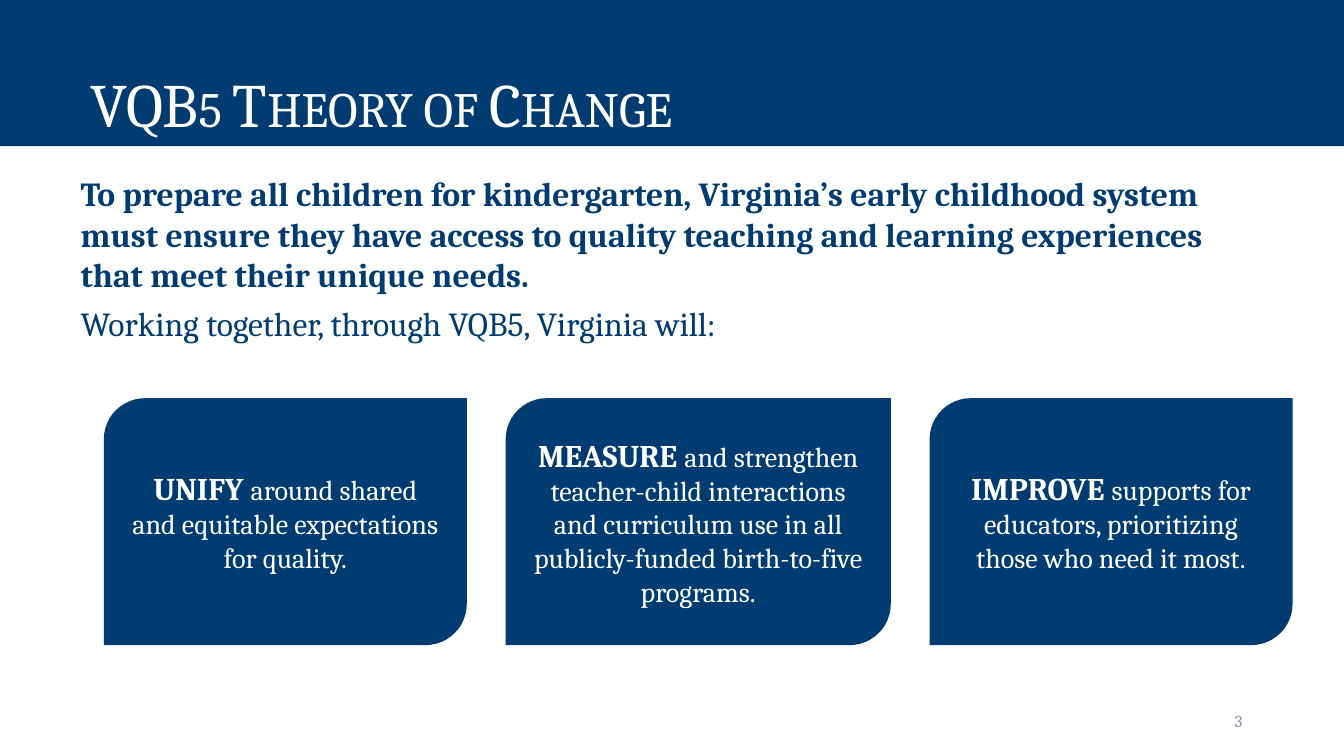
"""Build the VQB5 theory of change slide."""
from dataclasses import dataclass

from pptx import Presentation
from pptx.dml.color import RGBColor
from pptx.enum.shapes import MSO_SHAPE
from pptx.enum.text import MSO_ANCHOR, MSO_AUTO_SIZE, PP_ALIGN
from pptx.oxml.xmlchemy import OxmlElement
from pptx.util import Inches, Pt

CARD_SHAPE = MSO_SHAPE.ROUND_2_DIAG_RECTANGLE
LEFT, CENTER, RIGHT = PP_ALIGN.LEFT, PP_ALIGN.CENTER, PP_ALIGN.RIGHT
TOP, MIDDLE, BOTTOM = MSO_ANCHOR.TOP, MSO_ANCHOR.MIDDLE, MSO_ANCHOR.BOTTOM
NO_AUTOFIT = MSO_AUTO_SIZE.NONE
FONT = "Cambria"
NAVY, WHITE, GRAY = "003C71", "FFFFFF", "888FA3"
CARD_LEFT, CARD_TOP, CARD_HEIGHT, CARD_GAP = 1.03, 3.95, 2.45, 0.385
TITLE = "VQB5 Theory of Change"
GOAL = (
    "To prepare all children for kindergarten, Virginia’s early childhood system "
    "must ensure they have access to quality teaching and learning experiences "
    "that meet their unique needs."
)
LEAD_IN = "Working together, through VQB5, Virginia will:"


@dataclass(frozen=True)
class Card:
    """One strategy: its key word, explanation and width."""

    key_word: str
    explanation: str
    width: float


CARDS = (
    Card("UNIFY ", "around shared and equitable expectations for quality.", 3.6),
    Card(
        "MEASURE ",
        "and strengthen teacher-child interactions and curriculum use in all "
        "publicly-funded birth-to-five programs.",
        3.82,
    ),
    Card("IMPROVE ", "supports for educators, prioritizing those who need it most.", 3.6),
)


def color(value: str) -> RGBColor:
    """Turn a hex string into a colour."""
    return RGBColor.from_string(value)


def place(shape, left: float, top: float, width: float, height: float) -> None:
    """Set a shape's position and size in inches."""
    shape.left, shape.top = Inches(left), Inches(top)
    shape.width, shape.height = Inches(width), Inches(height)


def fill(shape, value: str) -> None:
    """Give a shape a solid fill."""
    shape.fill.solid()
    shape.fill.fore_color.rgb = color(value)


def set_frame(shape, anchor, side: float = 0.1, edge: float = 0.05):
    """Set wrapping, anchor and margins, and return the text frame."""
    frame = shape.text_frame
    frame.word_wrap = True
    frame.auto_size = NO_AUTOFIT
    frame.vertical_anchor = anchor
    frame.margin_left = frame.margin_right = Inches(side)
    frame.margin_top = frame.margin_bottom = Inches(edge)
    return frame


def style(para, size: float, value: str, align=LEFT) -> None:
    """Set the font and alignment of a paragraph."""
    para.alignment = align
    para.font.name = FONT
    para.font.size = Pt(size)
    para.font.color.rgb = color(value)


def add_title(page) -> None:
    """Turn the title placeholder into the navy banner."""
    title = page.shapes.title
    place(title, 0, 0, 13.33, 1.45)
    fill(title, NAVY)
    frame = set_frame(title, BOTTOM)
    frame.margin_left = Inches(0.9)
    para = frame.paragraphs[0]
    span = para.add_run()
    span.text = TITLE
    style(para, 44, WHITE)
    para.line_spacing = 0.9
    span.font._element.set("cap", "small")


def add_body(page) -> None:
    """Write the goal and the lead-in in the body placeholder."""
    body = page.placeholders[1]
    place(body, 0.7, 1.67, 11.97, 5.16)
    frame = set_frame(body, TOP)
    frame.text = f"{GOAL}\n{LEAD_IN}"
    for para, bold in zip(frame.paragraphs, (True, False)):
        style(para, 24, NAVY)
        para.font.bold = bold
        para.space_before = Pt(6)
        properties = para._p.get_or_add_pPr()
        properties.set("marL", "0")
        properties.set("indent", "0")
        properties.insert_element_before(OxmlElement("a:buNone"), "a:tabLst", "a:defRPr")


def add_card(page, card: Card, left: float) -> None:
    """Draw one strategy card."""
    shape = page.shapes.add_shape(
        CARD_SHAPE, Inches(left), Inches(CARD_TOP), Inches(card.width), Inches(CARD_HEIGHT)
    )
    shape.shadow.inherit = False
    fill(shape, NAVY)
    shape.line.fill.background()
    para = set_frame(shape, MIDDLE, 0.13, 0.13).paragraphs[0]
    style(para, 20, WHITE, CENTER)
    key_word = para.add_run()
    key_word.text = card.key_word
    key_word.font.bold = True
    key_word.font.size = Pt(22.5)
    para.add_run().text = card.explanation


def add_page_number(page) -> None:
    """Write the page number at the lower right."""
    box = page.shapes.add_textbox(Inches(9.42), Inches(6.95), Inches(3), Inches(0.4))
    para = set_frame(box, MIDDLE).paragraphs[0]
    para.text = "3"
    style(para, 12, GRAY, RIGHT)


def main() -> None:
    """Build and save the deck."""
    deck = Presentation()
    deck.slide_width, deck.slide_height = Inches(13.33), Inches(7.5)
    page = deck.slides.add_slide(deck.slide_layouts[1])
    add_title(page)
    add_body(page)
    left = CARD_LEFT
    for card in CARDS:
        add_card(page, card, left)
        left += card.width + CARD_GAP
    add_page_number(page)
    deck.save("out.pptx")


if __name__ == "__main__":
    main()
